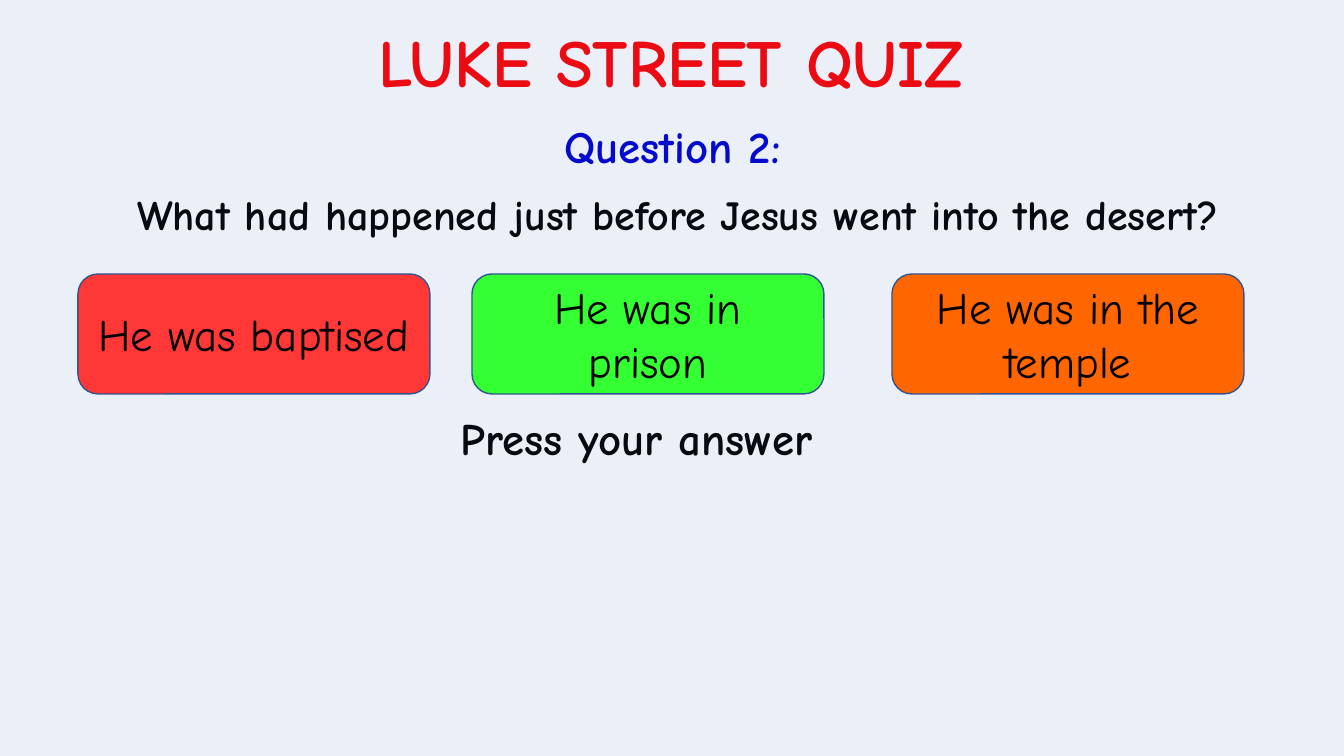
import pptx
import pptx.util
import pptx.dml.color
import pptx.enum.shapes
import pptx.enum.text
import pptx.oxml.ns
import lxml.etree

Pt = pptx.util.Pt
RGB = pptx.dml.color.RGBColor
SHAPE = pptx.enum.shapes.MSO_SHAPE
ALIGN = pptx.enum.text.PP_ALIGN
ANCHOR = pptx.enum.text.MSO_ANCHOR

FONT = "Comic Neue"
BLACK = RGB(0x00, 0x00, 0x00)
RED = RGB(0xFF, 0x00, 0x00)
NAVY = RGB(0x00, 0x00, 0xCC)
TINT = RGB(0x44, 0x72, 0xC4)
EDGE = RGB(0x32, 0x54, 0x91)

# Content: text, box in px, format
LINES = [
    ("LUKE STREET QUIZ", (314, 15, 714, 92),
     dict(size=48, color=RED, wrap=False)),
    ("Press your answer", (451, 412, 678, 73),
     dict(align=ALIGN.LEFT, space=0.9, before=7.5)),
    ("Question 2:", (450, 114, 445, 65), dict(color=NAVY)),
    ("What had happened just before Jesus went into the desert?",
     (28, 178, 1300, 120), dict(size=30, space=Pt(40), before=10)),
]
VEIL = (-36, -45, 1430, 880)
ANSWERS = [
    ("He was baptised", 78, RGB(0xFF, 0x37, 0x37)),
    ("He was in prison", 472, RGB(0x33, 0xFF, 0x33)),
    ("He was in the temple", 892, RGB(0xFF, 0x66, 0x00)),
]
TOP, WIDE, HIGH = 274, 352, 120

SCALE = 914400 / 100.8


def px(*nums):
    return [round(n * SCALE) for n in nums]


def write(shape, text, size=32, color=BLACK, bold=True, align=ALIGN.CENTER,
          space=None, before=None, wrap=True, anchor=ANCHOR.TOP):
    frame = shape.text_frame
    frame.word_wrap = wrap
    frame.vertical_anchor = anchor
    para = frame.paragraphs[0]
    para.alignment = align
    if space is not None:
        para.line_spacing = space
    if before is not None:
        para.space_before = Pt(before)
    run = para.add_run()
    run.text = text
    font = run.font
    font.name, font.size, font.bold = FONT, Pt(size), bold
    font.color.rgb = color


def block(slide, kind, box, fill):
    shape = slide.shapes.add_shape(kind, *px(*box))
    shape.shadow.inherit = False
    shape.fill.solid()
    shape.fill.fore_color.rgb = fill
    shape.line.color.rgb = EDGE
    shape.line.width = Pt(1)
    return shape


def main():
    deck = pptx.Presentation()
    deck.slide_width, deck.slide_height = px(1344, 756)
    slide = deck.slides.add_slide(deck.slide_layouts[6])

    # Headings and question
    for text, box, style in LINES:
        write(slide.shapes.add_textbox(*px(*box)), text, **style)

    # Pale tint over the whole slide
    veil = block(slide, SHAPE.RECTANGLE, VEIL, TINT)
    qn = pptx.oxml.ns.qn
    tone = veil.fill._xPr.find(qn("a:solidFill")).find(qn("a:srgbClr"))
    lxml.etree.SubElement(tone, qn("a:alpha"), val="10000")

    # Answer buttons
    for text, left, fill in ANSWERS:
        button = block(slide, SHAPE.ROUNDED_RECTANGLE,
                       (left, TOP, WIDE, HIGH), fill)
        write(button, text, bold=False, anchor=ANCHOR.MIDDLE)

    deck.save("out.pptx")


if __name__ == "__main__":
    main()
